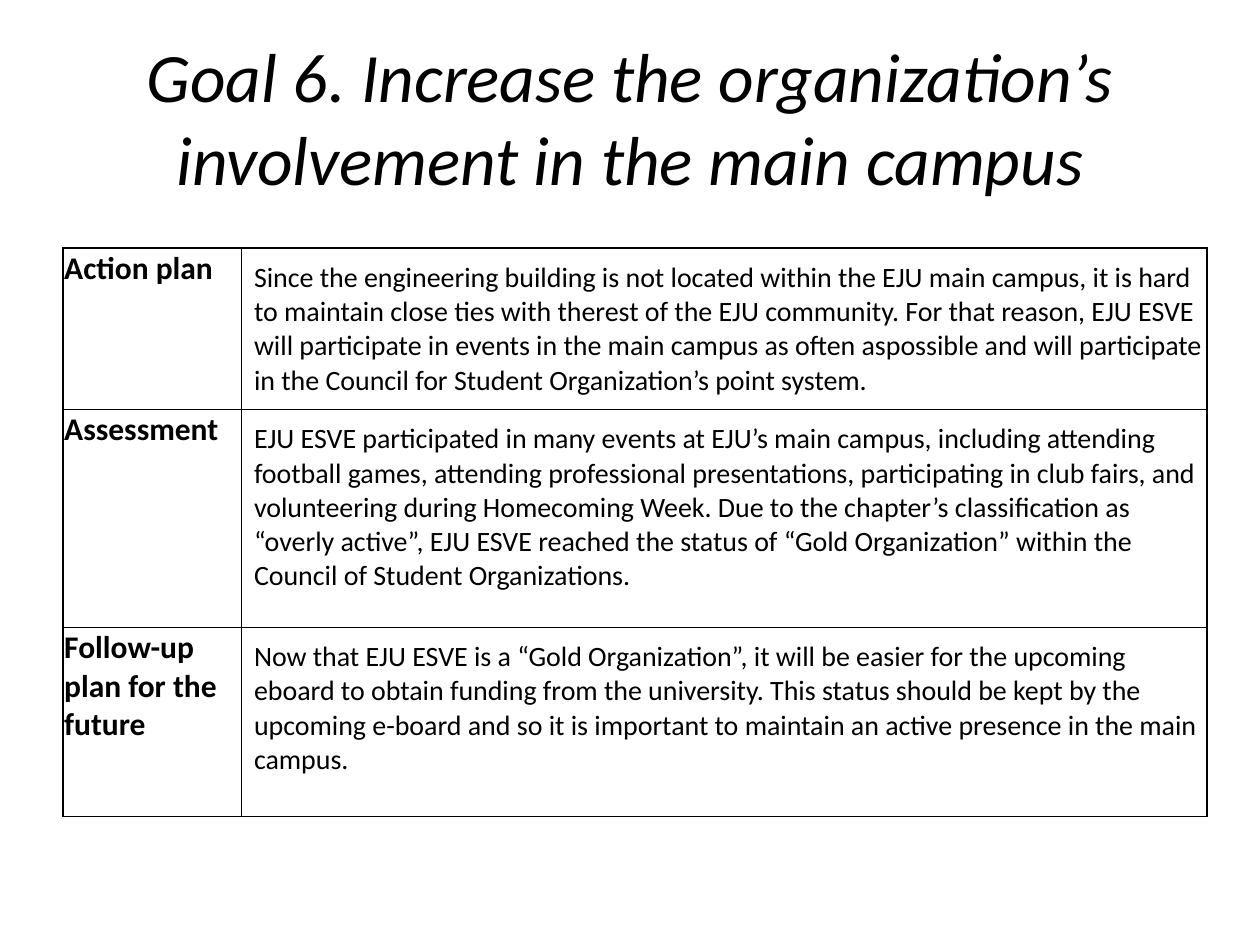
import pptx
import pptx.dml.color
import pptx.enum.text
import pptx.oxml
import pptx.oxml.ns
import pptx.util

Inches = pptx.util.Inches
BLACK = pptx.dml.color.RGBColor(0, 0, 0)
FONT = "Calibri"
SLIDE_WIDTH, SLIDE_HEIGHT = Inches(10), Inches(7.5)
MARGIN = 0.05 * SLIDE_WIDTH
LABEL_SHARE = 0.156
ROW_HEIGHTS = (1.28, 1.73, 1.5)

TITLE = "Goal 6. Increase the organization’s involvement in the main campus"
ROWS = (
    ("Action plan",
     "Since the engineering building is not located within the EJU main campus, "
     "it is hard to maintain close ties with therest of the EJU community. For that "
     "reason, EJU ESVE will participate in events in the main campus as often "
     "aspossible and will participate in the Council for Student Organization’s "
     "point system."),
    ("Assessment",
     "EJU ESVE participated in many events at EJU’s main campus, including "
     "attending football games, attending professional presentations, "
     "participating in club fairs, and volunteering during Homecoming Week. "
     "Due to the chapter’s classification as “overly active”, EJU ESVE reached the "
     "status of “Gold Organization” within the Council of Student Organizations."),
    ("Follow-up plan for the future",
     "Now that EJU ESVE is a “Gold Organization”, it will be easier for the upcoming "
     "eboard to obtain funding from the university. This status should be kept by "
     "the upcoming e-board and so it is important to maintain an active presence "
     "in the main campus."),
)


def style_font(font, size, bold=False, italic=False):
    font.name, font.size = FONT, pptx.util.Pt(size)
    font.bold, font.italic = bold, italic
    font.color.rgb = BLACK


def add_title(slide, left, top, width, height):
    box = slide.shapes.add_textbox(int(left), int(top), int(width), int(height))
    frame = box.text_frame
    frame.word_wrap = True
    frame.vertical_anchor = pptx.enum.text.MSO_ANCHOR.MIDDLE
    paragraph = frame.paragraphs[0]
    paragraph.text = TITLE
    paragraph.alignment = pptx.enum.text.PP_ALIGN.CENTER
    style_font(paragraph.font, 39.6, italic=True)


def set_borders(cell):
    """Draw a thin black line on all four sides of the cell."""
    properties = cell._tc.get_or_add_tcPr()
    for index, side in enumerate(("lnL", "lnR", "lnT", "lnB")):
        line = pptx.oxml.parse_xml(
            f'<a:{side} {pptx.oxml.ns.nsdecls("a")} w="{pptx.util.Pt(1)}">'
            f'<a:solidFill><a:srgbClr val="{BLACK}"/></a:solidFill></a:{side}>')
        properties.insert(index, line)


def fill_cell(cell, text, size, bold, inset):
    cell.fill.background()
    set_borders(cell)
    cell.margin_left = cell.margin_top = Inches(inset)
    cell.margin_right, cell.margin_bottom = Inches(0.01), 0
    paragraph = cell.text_frame.paragraphs[0]
    paragraph.text = text
    style_font(paragraph.font, size, bold=bold)


def add_plan_table(slide, left, top, width):
    height = Inches(sum(ROW_HEIGHTS))
    frame = slide.shapes.add_table(len(ROWS), 2, int(left), int(top), int(width), height)
    table = frame.table
    table.first_row = table.horz_banding = False
    for column, share in zip(table.columns, (LABEL_SHARE, 1 - LABEL_SHARE)):
        column.width = int(width * share)
    for index, (label, description) in enumerate(ROWS):
        table.rows[index].height = Inches(ROW_HEIGHTS[index])
        fill_cell(table.cell(index, 0), label, 18, True, 0.01)
        fill_cell(table.cell(index, 1), description, 16, False, 0.1)


def main():
    presentation = pptx.Presentation()
    presentation.slide_width, presentation.slide_height = SLIDE_WIDTH, SLIDE_HEIGHT
    slide = presentation.slides.add_slide(presentation.slide_layouts[6])
    add_title(slide, MARGIN, 0.04 * SLIDE_HEIGHT,
              SLIDE_WIDTH - 2 * MARGIN, SLIDE_HEIGHT / 6)
    add_plan_table(slide, MARGIN, Inches(1.97), Inches(9.08))
    presentation.save("out.pptx")


if __name__ == "__main__":
    main()
